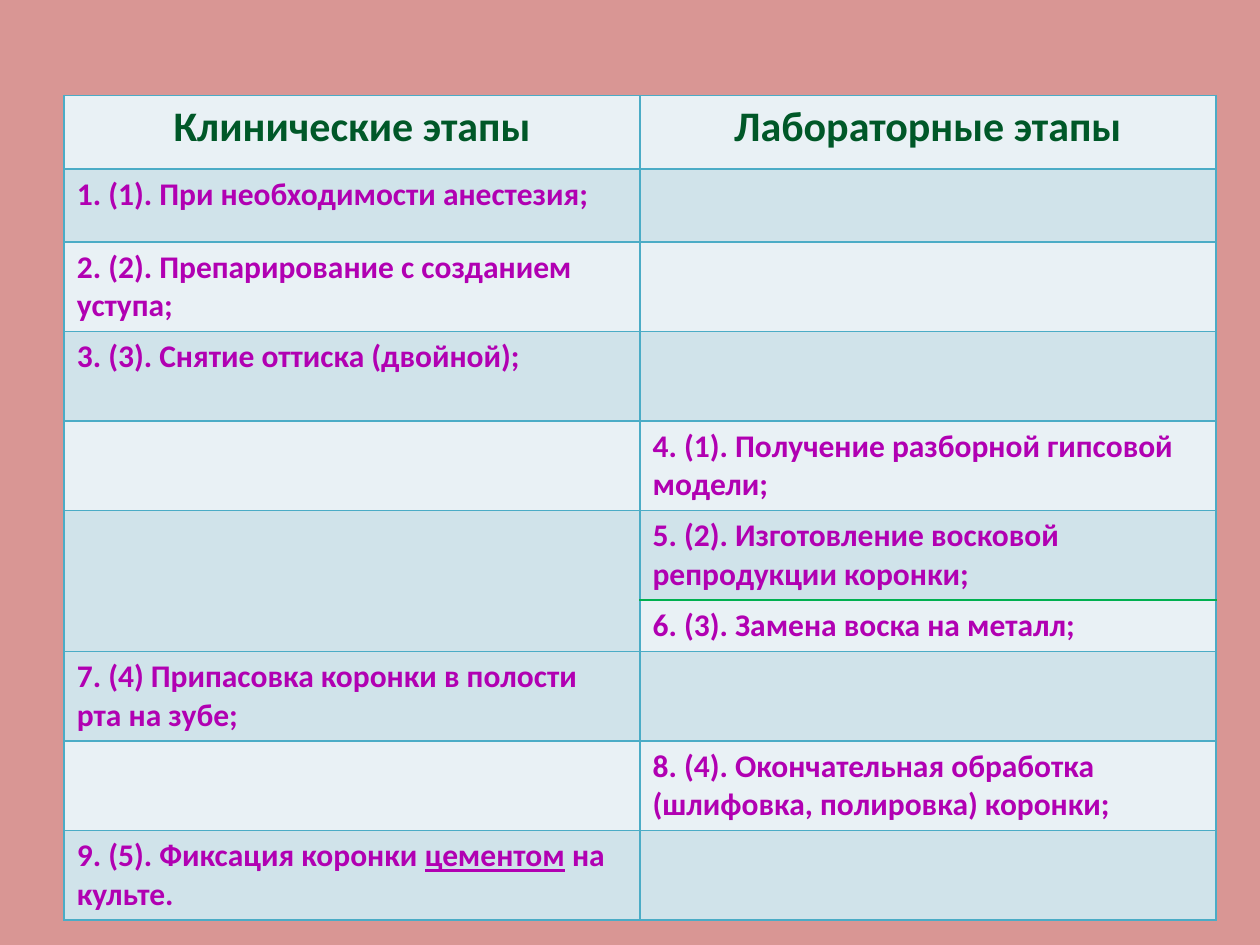
from lxml.etree import SubElement
from pptx import Presentation
from pptx.dml.color import RGBColor
from pptx.enum.text import PP_ALIGN
from pptx.oxml.ns import qn
from pptx.util import Inches, Pt

ROSE = RGBColor(0xD9, 0x96, 0x94)
PALE = RGBColor(0xE9, 0xF1, 0xF5)
BLUE = RGBColor(0xD0, 0xE3, 0xEA)
TEAL = RGBColor(0x4B, 0xAC, 0xC6)
LIME = RGBColor(0x00, 0xB0, 0x50)
GREEN = RGBColor(0x00, 0x58, 0x28)
PURPLE = RGBColor(0xB1, 0x00, 0xB2)

# Content: clinical stage, laboratory stage, row height; *...* is underlined
HEAD, ONE, TWO = 0.58, 0.41, 0.71
ROWS = [
    ("Клинические этапы", "Лабораторные этапы", HEAD),
    ("1. (1). При необходимости анестезия;", "", HEAD),
    ("2. (2). Препарирование с созданием уступа;", "", TWO),
    ("3. (3). Снятие оттиска (двойной);", "", TWO),
    ("", "4. (1). Получение разборной гипсовой модели;", TWO),
    ("", "5. (2). Изготовление восковой репродукции коронки;", TWO),
    ("", "6. (3). Замена воска на металл;", ONE),
    ("7. (4) Припасовка коронки в полости рта на зубе;", "", TWO),
    ("", "8. (4). Окончательная обработка (шлифовка, полировка) коронки;", TWO),
    ("9. (5). Фиксация коронки *цементом* на культе.", "", TWO),
]
WAX, METAL = 5, 6  # rows whose clinical cells are merged
LEFT, TOP, COL = 0.51, 0.76, 4.57


def add_borders(cell, colors):
    props = cell._tc.get_or_add_tcPr()
    for side, color in zip("LRTB", colors):
        line = SubElement(props, qn(f"a:ln{side}"), w=str(Pt(1)))
        fill = SubElement(line, qn("a:solidFill"))
        SubElement(fill, qn("a:srgbClr"), val=str(color))


def write_text(cell, text, head):
    para = cell.text_frame.paragraphs[0]
    for i, part in enumerate(text.split("*")):
        if part:
            run = para.add_run()
            run.text = part
            if i % 2:
                run.font.underline = True
    font = para.font
    font.name, font.bold = "Calibri", True
    font.size = Pt(24 if head else 18)
    font.color.rgb = GREEN if head else PURPLE
    if head:
        para.alignment = PP_ALIGN.CENTER


deck = Presentation()
deck.slide_width, deck.slide_height = Inches(10), Inches(7.5)
slide = deck.slides.add_slide(deck.slide_layouts[6])
slide.background.fill.solid()
slide.background.fill.fore_color.rgb = ROSE

# Table of stages
high = sum(row[-1] for row in ROWS)
table = slide.shapes.add_table(len(ROWS), 2, Inches(LEFT), Inches(TOP),
                               Inches(2 * COL), Inches(high)).table
for r, (*texts, tall) in enumerate(ROWS):
    table.rows[r].height = Inches(tall)
    for c, text in enumerate(texts):
        cell = table.cell(r, c)
        upper = LIME if (r, c) == (METAL, 1) else TEAL
        lower = LIME if (r, c) == (WAX, 1) else TEAL
        add_borders(cell, (TEAL, TEAL, upper, lower))
        cell.fill.solid()
        cell.fill.fore_color.rgb = BLUE if r % 2 else PALE
        write_text(cell, text, r == 0)
table.cell(WAX, 0).merge(table.cell(METAL, 0))

deck.save("out.pptx")
